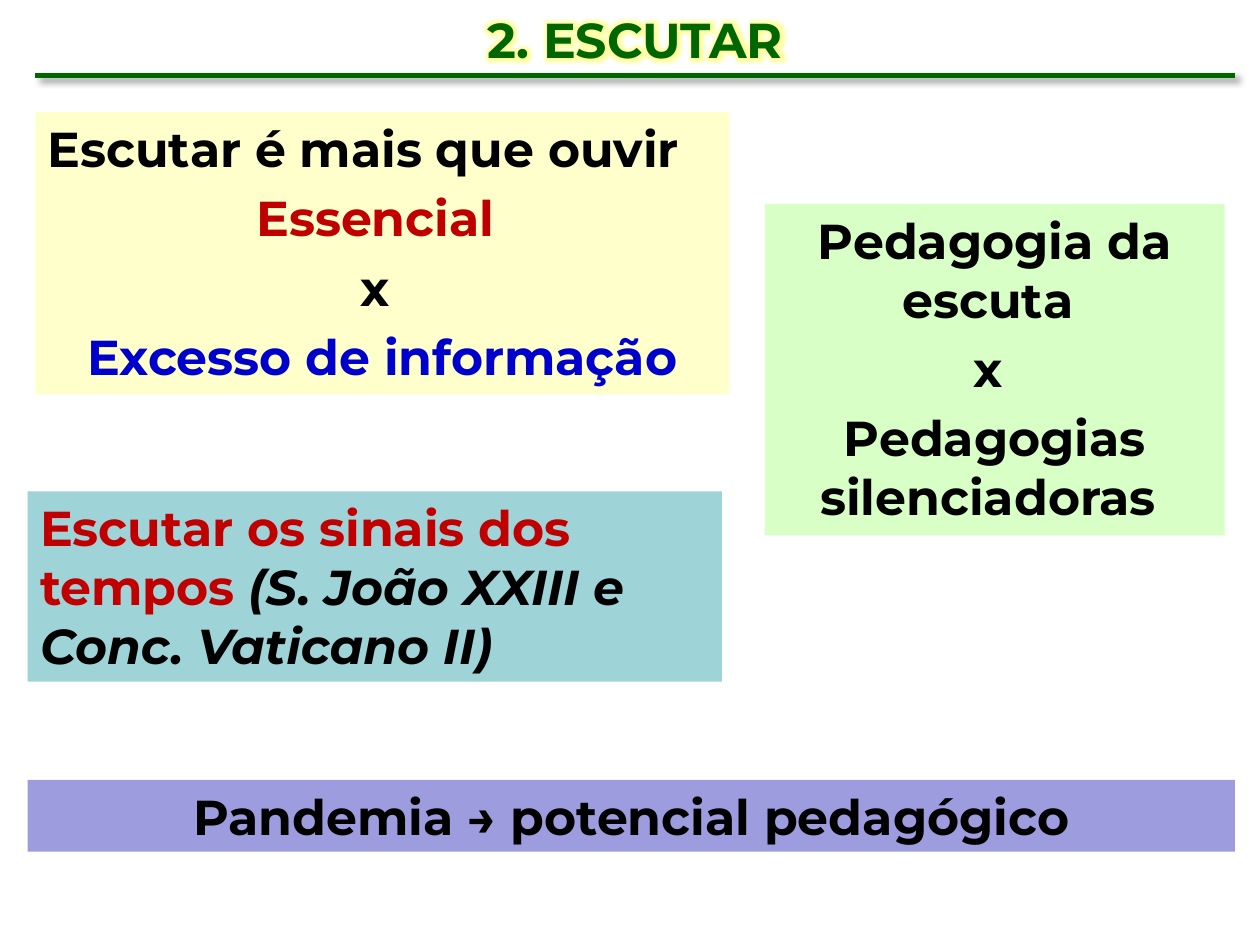
from lxml import etree
from pptx import Presentation
from pptx.dml.color import RGBColor
from pptx.enum.shapes import MSO_CONNECTOR, MSO_SHAPE
from pptx.enum.text import MSO_ANCHOR, MSO_AUTO_SIZE, PP_ALIGN
from pptx.oxml import parse_xml
from pptx.oxml.ns import nsdecls, qn
from pptx.util import Inches, Pt

GREEN, BLACK, RED, BLUE = "006600", "000000", "C00000", "0000CC"
LEFT, CENTER = PP_ALIGN.LEFT, PP_ALIGN.CENTER


def color(hex_value):
    return RGBColor.from_string(hex_value)


def style(font, hex_value):
    font.name = "Montserrat"
    font.size = Pt(28)
    font.bold = True
    font.color.rgb = color(hex_value)


def effects(content):
    return parse_xml(f"<a:effectLst {nsdecls('a')}>{content}</a:effectLst>")


def add_heading(slide, left, top, width, height, text):
    # Glowing title
    title = slide.shapes.title
    title.left, title.top = Inches(left), Inches(top)
    title.width, title.height = Inches(width), Inches(height)
    frame = title.text_frame
    frame.auto_size = MSO_AUTO_SIZE.NONE
    frame.vertical_anchor = MSO_ANCHOR.MIDDLE
    paragraph = frame.paragraphs[0]
    paragraph.alignment = CENTER
    run = paragraph.add_run()
    run.text = text
    style(run.font, GREEN)
    glow = effects('<a:glow rad="101600"><a:srgbClr val="FFFF66">'
                   '<a:alpha val="60000"/></a:srgbClr></a:glow>')
    run._r.rPr.find(qn("a:solidFill")).addnext(glow)

    # Rule under the title, with its shadow
    rule_y = Inches(top + height + 0.03)
    rule = slide.shapes.add_connector(
        MSO_CONNECTOR.STRAIGHT, Inches(left), rule_y, Inches(left + width), rule_y)
    rule.line.color.rgb = color(GREEN)
    rule.line.width = Pt(3)
    rule._element.spPr.append(effects(
        f'<a:outerShdw blurRad="{Pt(4)}" dist="{Pt(3)}" dir="2700000" algn="tl" '
        'rotWithShape="0"><a:srgbClr val="000000"><a:alpha val="40000"/>'
        '</a:srgbClr></a:outerShdw>'))


def add_panel(slide, left, top, width, height, fill, paragraphs):
    """Each paragraph is (alignment, [(text, colour, italic), ...])."""
    panel = slide.shapes.add_shape(
        MSO_SHAPE.RECTANGLE, Inches(left), Inches(top), Inches(width), Inches(height))
    panel.shadow.inherit = False
    panel.fill.solid()
    panel.fill.fore_color.rgb = color(fill)
    panel.line.fill.background()
    frame = panel.text_frame
    frame.word_wrap = True
    frame.auto_size = MSO_AUTO_SIZE.SHAPE_TO_FIT_TEXT
    frame.vertical_anchor = MSO_ANCHOR.TOP
    for index, (alignment, pieces) in enumerate(paragraphs):
        paragraph = frame.add_paragraph() if index else frame.paragraphs[0]
        paragraph.alignment = alignment
        paragraph.space_after = Pt(6)
        for text, text_color, italic in pieces:
            run = paragraph.add_run()
            run.text = text
            style(run.font, text_color)
            run.font.italic = italic


def line(text, text_color=BLACK, alignment=CENTER):
    return alignment, [(text, text_color, False)]


def main():
    presentation = Presentation()
    presentation.slide_width, presentation.slide_height = Inches(10), Inches(7.5)
    slide = presentation.slides.add_slide(presentation.slide_layouts[5])

    add_heading(slide, 0.28, 0.05, 9.52, 0.52, "2. ESCUTAR")

    # Listening against information overload
    add_panel(slide, 0.28, 0.89, 5.51, 2.24, "FFFFCC", [
        line("Escutar é mais que ouvir", alignment=LEFT),
        line("Essencial ", RED),
        line("x "),
        line("Excesso de informação", BLUE),
    ])
    # Opposed pedagogies
    add_panel(slide, 6.07, 1.62, 3.65, 2.63, "D8FFC5", [
        line("Pedagogia da escuta "),
        line("x "),
        line("Pedagogias silenciadoras "),
    ])
    # Signs of the times
    add_panel(slide, 0.22, 3.9, 5.51, 1.51, "9ED3D7", [
        (LEFT, [("Escutar os sinais dos tempos ", RED, False),
                ("(S. João XXIII e Conc. Vaticano II)", BLACK, True)]),
    ])
    # Conclusion
    add_panel(slide, 0.22, 6.19, 9.58, 0.57, "9C9CDF",
              [line("Pandemia → potencial pedagógico")])

    presentation.save("out.pptx")


if __name__ == "__main__":
    main()
